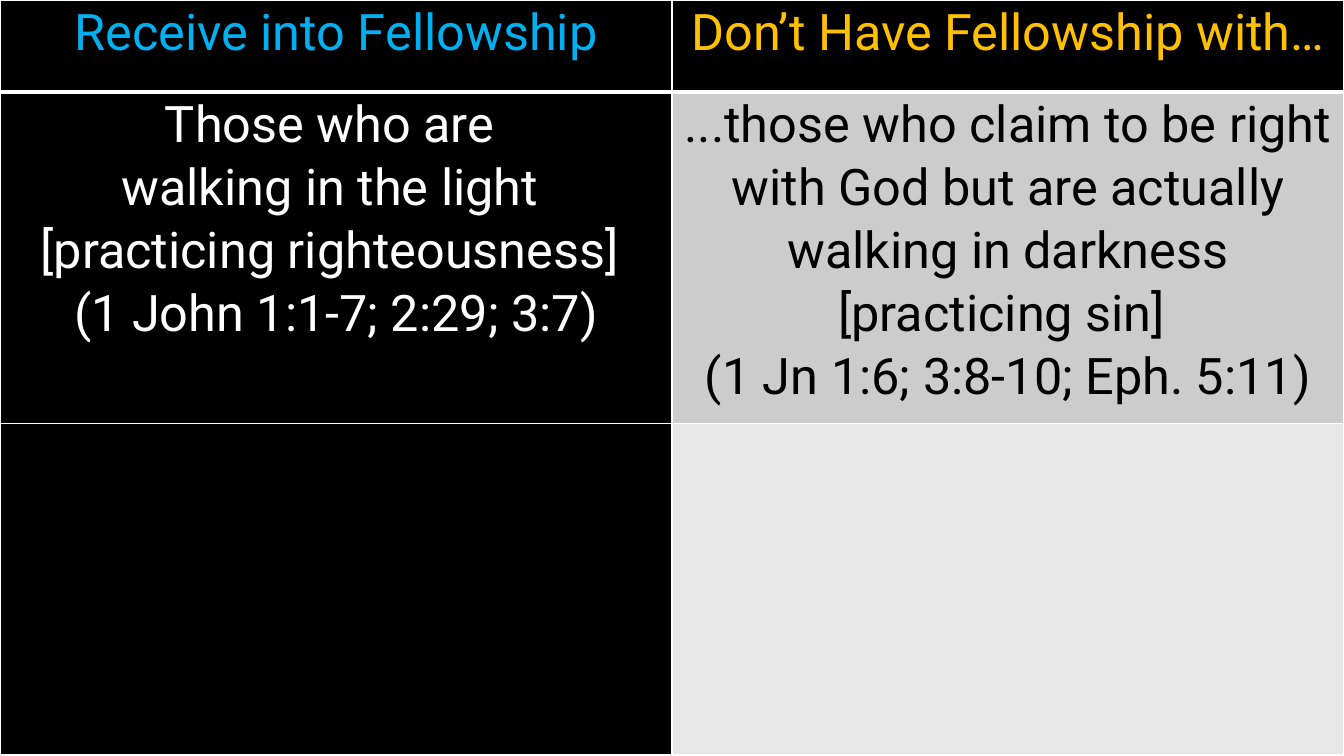
from dataclasses import dataclass

from lxml.etree import SubElement
from pptx import Presentation
from pptx.dml.color import RGBColor
from pptx.enum.text import MSO_ANCHOR, PP_ALIGN
from pptx.oxml.ns import qn
from pptx.util import Inches, Pt


@dataclass(frozen=True)
class Theme:
    font: str = "Roboto"
    text_size: int = 36
    line_spacing: float = 1.07
    black: str = "000000"
    white: str = "FFFFFF"
    blue: str = "00B0F0"
    gold: str = "FFC000"
    gray: str = "CCCCCC"
    pale_gray: str = "E7E7E7"
    thin_line: int = 1
    thick_line: int = 3


@dataclass(frozen=True)
class CellContent:
    fill: str
    color: str = Theme.white
    lines: tuple = ()


def write_lines(frame, lines, *, theme, color, align=PP_ALIGN.CENTER):
    """Fill a text frame with one paragraph per line."""
    for index, line in enumerate(lines):
        para = frame.add_paragraph() if index else frame.paragraphs[0]
        para.alignment = align
        para.line_spacing = theme.line_spacing
        span = para.add_run()
        span.text = line
        span.font.name = theme.font
        span.font.size = Pt(theme.text_size)
        span.font.color.rgb = RGBColor.from_string(color)


class PageBuilder:
    def __init__(self, page, theme):
        self.page = page
        self.theme = theme

    def background(self, color):
        fill = self.page.background.fill
        fill.solid()
        fill.fore_color.rgb = RGBColor.from_string(color)

    def borders(self, cell, widths):
        """Draw white cell borders; widths are points for left, right, top, bottom."""
        properties = cell._tc.get_or_add_tcPr()
        for index, (side, width) in enumerate(zip("LRTB", widths)):
            line = SubElement(properties, qn(f"a:ln{side}"), w=str(Pt(width)))
            fill = SubElement(line, qn("a:solidFill"))
            SubElement(fill, qn("a:srgbClr"), val=self.theme.white)
            properties.insert(index, line)

    def cell(self, cell, content):
        cell.margin_left = cell.margin_right = Inches(0.07)
        cell.margin_top = cell.margin_bottom = 0
        cell.vertical_anchor = MSO_ANCHOR.TOP
        cell.fill.solid()
        cell.fill.fore_color.rgb = RGBColor.from_string(content.fill)
        write_lines(cell.text_frame, content.lines, theme=self.theme, color=content.color)

    def table(self, rows, row_heights, width, height):
        table = self.page.shapes.add_table(
            len(rows), len(rows[0]), 0, 0, width, height
        ).table
        thin, thick = self.theme.thin_line, self.theme.thick_line
        for row_index, (contents, row_height) in enumerate(zip(rows, row_heights)):
            table.rows[row_index].height = Inches(row_height)
            top = thick if row_index == 1 else thin
            bottom = thick if row_index == 0 else thin
            for column_index, content in enumerate(contents):
                cell = table.cell(row_index, column_index)
                self.cell(cell, content)
                self.borders(cell, (thin, thin, top, bottom))


def main():
    theme = Theme()
    deck = Presentation()
    deck.slide_width, deck.slide_height = Inches(13.33), Inches(7.5)
    builder = PageBuilder(deck.slides.add_slide(deck.slide_layouts[6]), theme)
    builder.background(theme.black)

    rows = [
        [
            CellContent(theme.black, theme.blue, ("Receive into Fellowship",)),
            CellContent(theme.black, theme.gold, ("Don’t Have Fellowship with…",)),
        ],
        [
            CellContent(theme.black, theme.white, (
                "Those who are ",
                "walking in the light ",
                "[practicing righteousness] ",
                "(1 John 1:1-7; 2:29; 3:7)",
            )),
            CellContent(theme.gray, theme.black, (
                "...those who claim to be right with God but are actually "
                "walking in darkness [practicing sin] ",
                "(1 Jn 1:6; 3:8-10; Eph. 5:11)",
            )),
        ],
        [CellContent(theme.black), CellContent(theme.pale_gray)],
    ]
    builder.table(rows, (0.91, 3.29, 3.29), deck.slide_width, deck.slide_height)
    deck.save("out.pptx")


if __name__ == "__main__":
    main()
